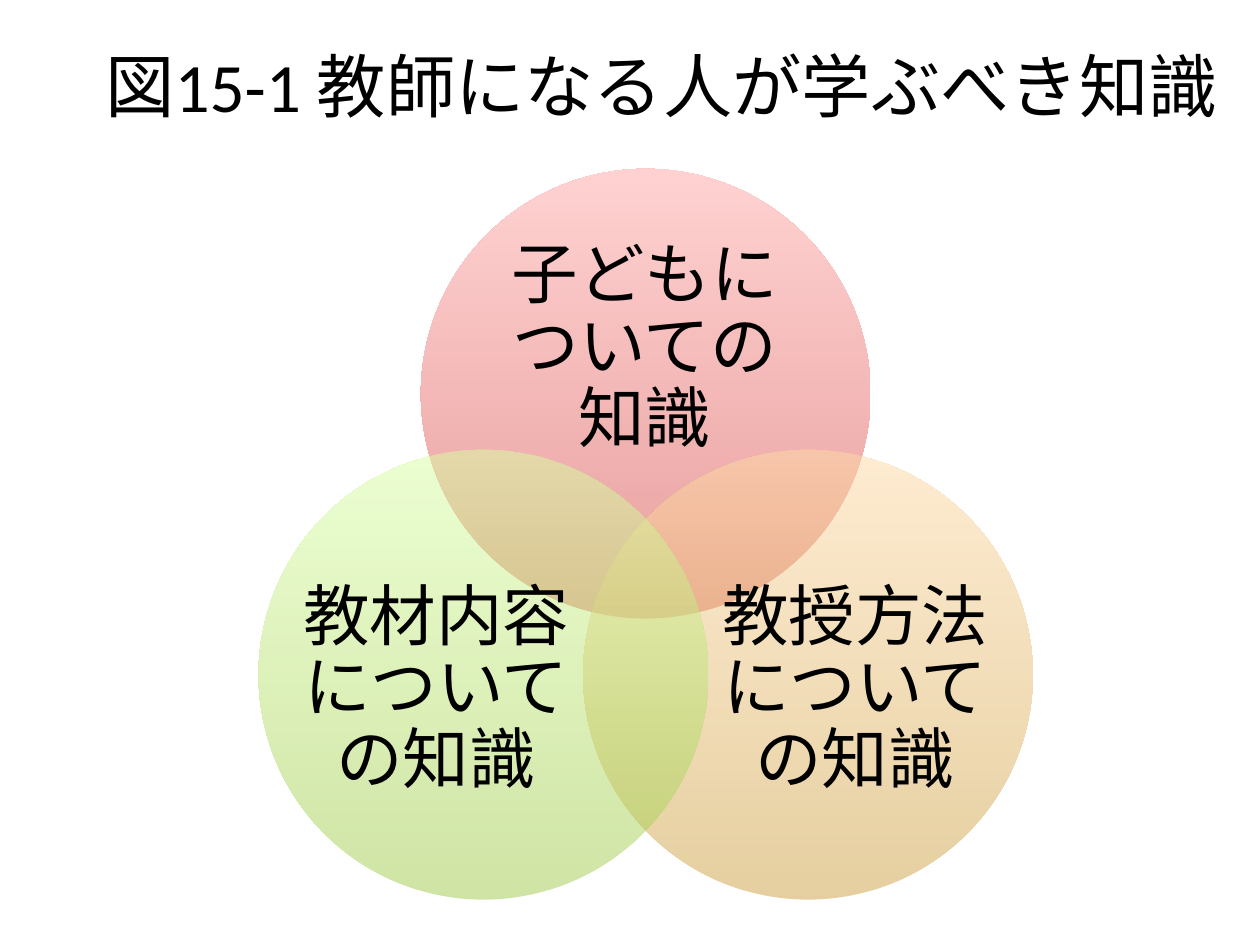
from math import cos, radians, sin

from lxml import etree
from pptx import Presentation
from pptx.dml.color import RGBColor
from pptx.enum.shapes import MSO_SHAPE
from pptx.enum.text import MSO_ANCHOR, PP_ALIGN
from pptx.oxml.ns import qn
from pptx.util import Inches, Pt

OVAL = MSO_SHAPE.OVAL
MIDDLE = MSO_ANCHOR.MIDDLE
CENTER = PP_ALIGN.CENTER
FONT = "Calibri"
COLORS = {
    "text": "000000",
    "red": ("D1403C", "FFA6A5"),
    "orange": ("CDA143", "FFDAA5"),
    "green": ("A0CA4A", "DAFFA5"),
}
# Text, colour, angle from the centre, label box as shares of the circle
CIRCLES = [
    ("子どもについての知識", "red", -90, (0.13, 0.175, 0.735, 0.45)),
    ("教授方法についての知識", "orange", 30, (0.305, 0.26, 0.6, 0.55)),
    ("教材内容についての知識", "green", 150, (0.095, 0.26, 0.6, 0.55)),
]


def add_text(slide, text, box, size, inset=0.0, line=1.0):
    shape = slide.shapes.add_textbox(*map(Inches, box))
    frame = shape.text_frame
    frame.word_wrap = True
    frame.vertical_anchor = MIDDLE
    frame.margin_left = frame.margin_right = Inches(inset)
    frame.margin_top = frame.margin_bottom = Inches(inset / 2)
    frame.text = text
    para = frame.paragraphs[0]
    para.alignment = CENTER
    para.line_spacing = line
    font = para.runs[0].font
    font.name = FONT
    font.size = Pt(size)
    font.color.rgb = RGBColor.from_string(COLORS["text"])


def add_circle(slide, box, color):
    """Draw a half-transparent circle that fades from bottom to top."""
    shape = slide.shapes.add_shape(OVAL, *map(Inches, box))
    shape.shadow.inherit = False
    shape.line.fill.background()
    shape.fill.gradient()
    shape.fill.gradient_angle = 90
    for stop, shade in zip(shape.fill.gradient_stops, COLORS[color]):
        stop.color.rgb = RGBColor.from_string(shade)
    for tone in shape._element.spPr.iter(qn("a:srgbClr")):
        etree.SubElement(tone, qn("a:alpha"), val="50000")


def add_venn(slide, box):
    """Set three equal circles on a ring that fills the height of the box."""
    left, top, width, height = box
    size = height / 1.625
    ring = size * 5 / 12
    mid_x, mid_y = left + width / 2, top + size / 2 + ring
    for text, color, angle, (dx, dy, w, h) in CIRCLES:
        x = mid_x + ring * cos(radians(angle)) - size / 2
        y = mid_y + ring * sin(radians(angle)) - size / 2
        add_circle(slide, (x, y, size, size), color)
        label = (x + dx * size, y + dy * size, w * size, h * size)
        add_text(slide, text, label, 38, line=0.9)


def main():
    deck = Presentation()
    deck.slide_width, deck.slide_height = Inches(10), Inches(7.5)
    slide = deck.slides.add_slide(deck.slide_layouts[6])
    add_text(slide, "図15-1 教師になる人が学ぶべき知識", (0.5, 0.26, 9.5, 0.82), 39.6, inset=0.1)
    add_venn(slide, (2.05, 1.34, 6.15, 5.8))
    deck.save("out.pptx")


if __name__ == "__main__":
    main()
